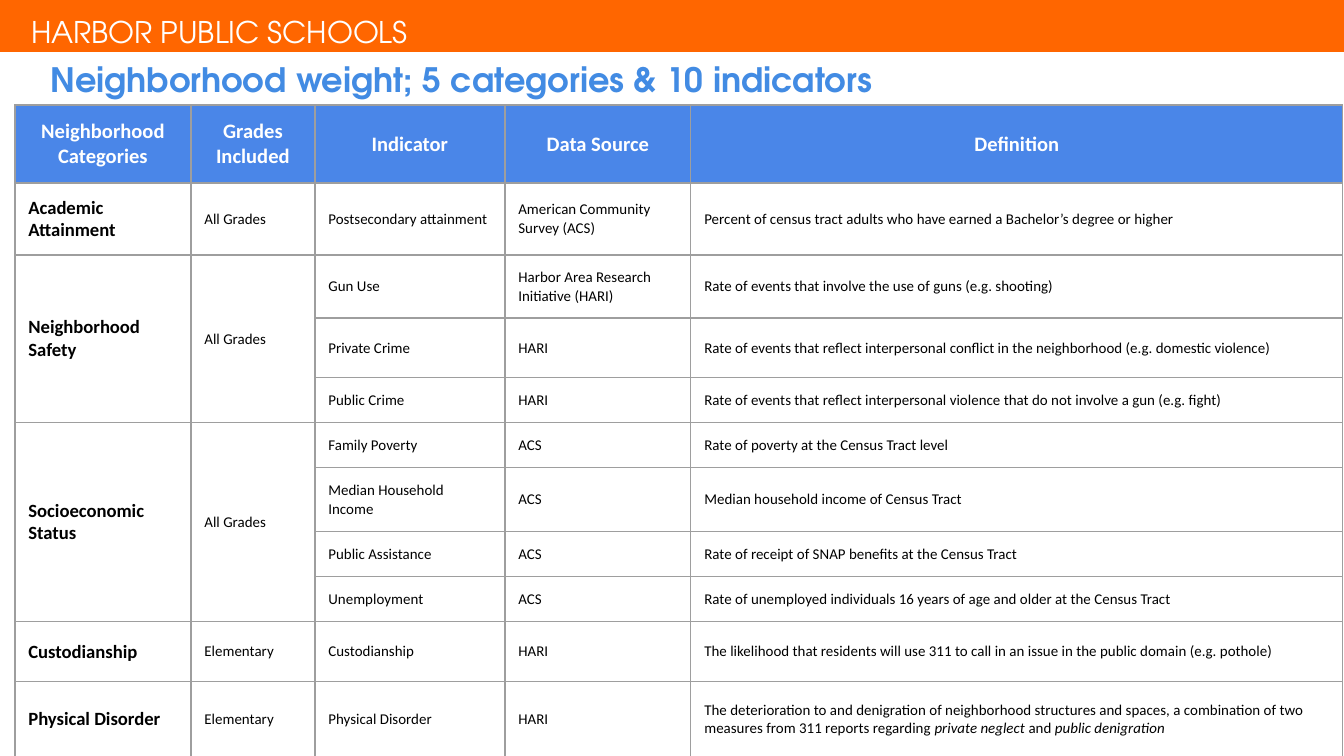
"""Builds the table slide of neighborhood weight categories and indicators."""
from dataclasses import dataclass

from lxml import etree
from pptx import Presentation, util as u
from pptx.dml.color import RGBColor
from pptx.enum import shapes, text
from pptx.oxml import ns

EMU_PER_PX = 914400 / 134.4


def px(length):
    return u.Emu(round(length * EMU_PER_PX))


@dataclass(frozen=True)
class Theme:
    orange: str = "FF6600"
    title_blue: str = "428BE3"
    header_blue: str = "4A86E8"
    border: str = "9E9E9E"
    white: str = "FFFFFF"
    black: str = "000000"
    display_font: str = "TeX Gyre Adventor"
    body_font: str = "Calibri"
    title_size: int = 18
    banner_size: int = 16
    header_size: int = 11
    category_size: int = 10
    body_size: int = 8
    border_width: float = 0.75


class SlideBuilder:
    def __init__(self, page, theme):
        self.page = page
        self.theme = theme

    def format_span(self, span, font, size, color, bold=False):
        span.font.name = font
        span.font.size = u.Pt(size)
        span.font.color.rgb = RGBColor.from_string(color)
        span.font.bold = bold

    def bar(self, left, top, width, height, color):
        box = self.page.shapes.add_shape(
            shapes.MSO_SHAPE.RECTANGLE, px(left), px(top), px(width), px(height))
        box.shadow.inherit = False
        box.fill.solid()
        box.fill.fore_color.rgb = RGBColor.from_string(color)
        box.line.fill.background()

    def label(self, words, left, top, width, height, size, color, bold=False):
        box = self.page.shapes.add_textbox(px(left), px(top), px(width), px(height))
        frame = box.text_frame
        frame.word_wrap = True
        frame.text = words
        self.format_span(frame.paragraphs[0].runs[0],
                         self.theme.display_font, size, color, bold)

    def borders(self, cell):
        properties = cell._tc.get_or_add_tcPr()
        for side in ("a:lnL", "a:lnR", "a:lnT", "a:lnB"):
            line = etree.SubElement(properties, ns.qn(side),
                                    w=str(u.Pt(self.theme.border_width)))
            fill = etree.SubElement(line, ns.qn("a:solidFill"))
            etree.SubElement(fill, ns.qn("a:srgbClr"), val=self.theme.border)

    def cell(self, cell, words, fill, size, color, bold, centered):
        cell.margin_left = cell.margin_right = u.Inches(0.1)
        cell.margin_top = cell.margin_bottom = u.Inches(0.1)
        cell.vertical_anchor = text.MSO_ANCHOR.MIDDLE
        self.borders(cell)
        cell.fill.solid()
        cell.fill.fore_color.rgb = RGBColor.from_string(fill)
        para = cell.text_frame.paragraphs[0]
        para.alignment = text.PP_ALIGN.CENTER if centered else text.PP_ALIGN.LEFT
        for index, part in enumerate(words.split("*")):
            if part:
                span = para.add_run()
                span.text = part
                self.format_span(span, self.theme.body_font, size, color, bold)
                span.font.italic = index % 2 == 1

    def table(self, left, top, columns, heights, rows, merges):
        theme = self.theme
        table = self.page.shapes.add_table(
            len(rows), len(columns), px(left), px(top),
            px(sum(columns)), px(sum(heights))).table
        table.horz_banding = False
        for column, width in zip(table.columns, columns):
            column.width = px(width)
        for row, height in zip(table.rows, heights):
            row.height = px(height)
        for r, row in enumerate(rows):
            for c, words in enumerate(row):
                if r == 0:
                    style = (theme.header_blue, theme.header_size, theme.white, True, True)
                elif c == 0:
                    style = (theme.white, theme.category_size, theme.black, True, False)
                else:
                    style = (theme.white, theme.body_size, theme.black, False, False)
                self.cell(table.cell(r, c), words, *style)
        for first, last in merges:
            for c in (0, 1):
                table.cell(first, c).merge(table.cell(last, c))


COLUMNS = [176, 124, 190, 186, 652]
HEIGHTS = [78, 72, 63, 60, 45, 45, 64, 45, 45, 60, 76]
HEADER = ["Neighborhood Categories", "Grades Included", "Indicator",
          "Data Source", "Definition"]
CATEGORIES = [
    ("Academic Attainment", "All Grades", [
        ("Postsecondary attainment", "American Community Survey (ACS)",
         "Percent of census tract adults who have earned a Bachelor’s degree or higher")]),
    ("Neighborhood Safety", "All Grades", [
        ("Gun Use", "Harbor Area Research Initiative (HARI)",
         "Rate of events that involve the use of guns (e.g. shooting)"),
        ("Private Crime", "HARI",
         "Rate of events that reflect interpersonal conflict in the neighborhood "
         "(e.g. domestic violence)"),
        ("Public Crime", "HARI",
         "Rate of events that reflect interpersonal violence that do not involve a gun "
         "(e.g. fight)")]),
    ("Socioeconomic Status", "All Grades", [
        ("Family Poverty", "ACS", "Rate of poverty at the Census Tract level"),
        ("Median Household Income", "ACS", "Median household income of Census Tract"),
        ("Public Assistance", "ACS", "Rate of receipt of SNAP benefits at the Census Tract"),
        ("Unemployment", "ACS",
         "Rate of unemployed individuals 16 years of age and older at the Census Tract")]),
    ("Custodianship", "Elementary", [
        ("Custodianship", "HARI",
         "The likelihood that residents will use 311 to call in an issue in the public domain "
         "(e.g. pothole)")]),
    ("Physical Disorder", "Elementary", [
        ("Physical Disorder", "HARI",
         "The deterioration to and denigration of neighborhood structures and spaces, "
         "a combination of two measures from 311 reports regarding "
         "*private neglect *and *public denigration*")]),
]


def main():
    theme = Theme()
    deck = Presentation()
    deck.slide_width, deck.slide_height = px(1344), px(756)
    builder = SlideBuilder(deck.slides.add_slide(deck.slide_layouts[6]), theme)
    builder.bar(0, 0, 1344, 52, theme.orange)
    builder.label("HARBOR PUBLIC SCHOOLS", 18, 7, 420, 38,
                  theme.banner_size, theme.white)
    builder.label("Neighborhood weight; 5 categories & 10 indicators",
                  37, 52, 1289, 64, theme.title_size, theme.title_blue, True)

    rows, merges = [HEADER], []
    for category, grades, indicators in CATEGORIES:
        first = len(rows)
        for index, indicator in enumerate(indicators):
            heading = ("", "") if index else (category, grades)
            rows.append([*heading, *indicator])
        if len(indicators) > 1:
            merges.append((first, len(rows) - 1))
    builder.table(15, 105, COLUMNS, HEIGHTS, rows, merges)
    deck.save("out.pptx")


if __name__ == "__main__":
    main()
